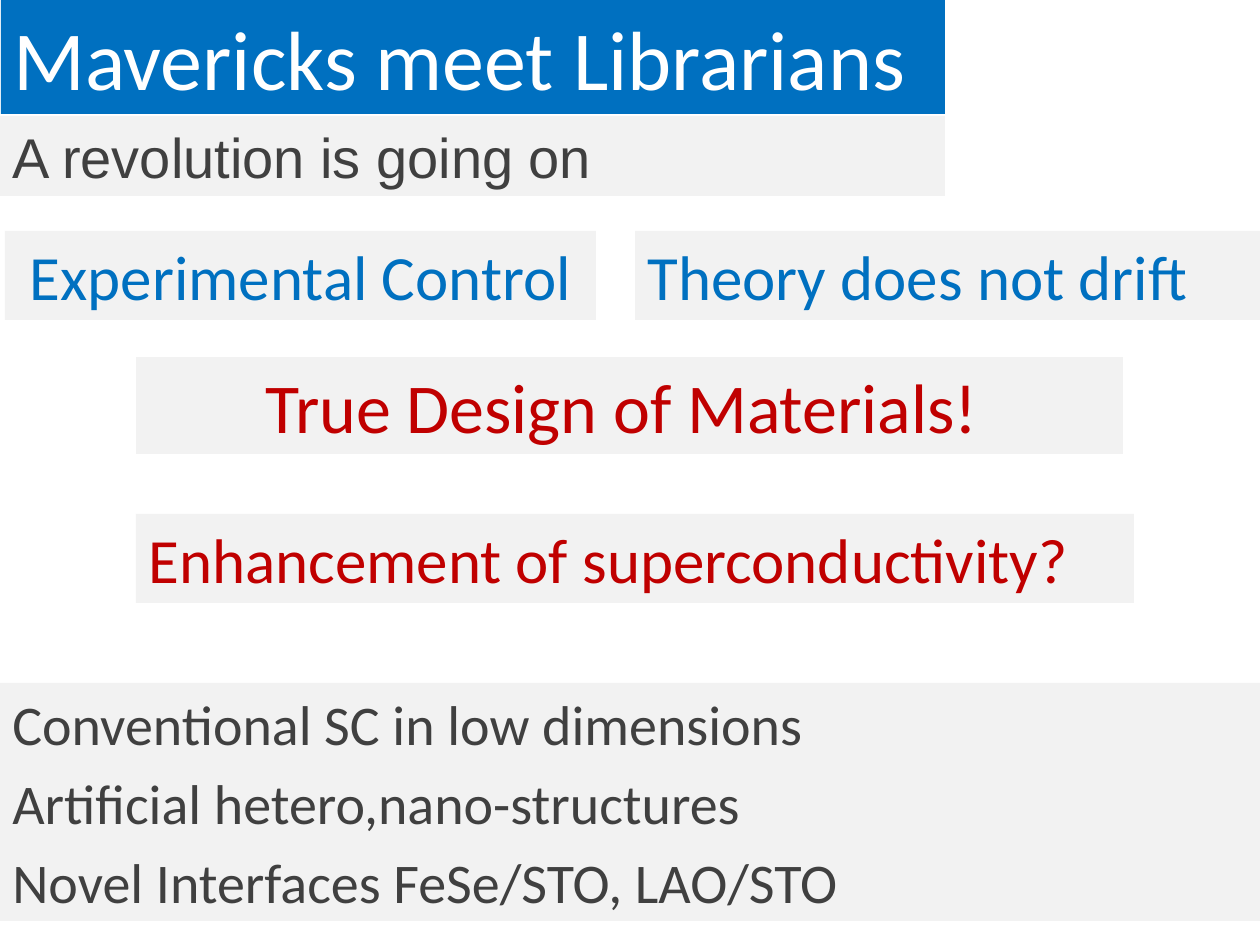
from pptx import Presentation
from pptx import util as u
from pptx.dml import color
from pptx.enum import text

PX = 914400 / 126
BLUE, RED, GREY, PALE, WHITE = "0070C0", "C00000", "404040", "F2F2F2", "FFFFFF"


def px(length):
    return u.Emu(round(length * PX))


def rgb(value):
    return color.RGBColor.from_string(value)


class Deck:
    """Hold the banner style and the current slide."""

    def __init__(self, width, height, font):
        self.presentation = Presentation()
        self.presentation.slide_width = px(width)
        self.presentation.slide_height = px(height)
        self.slide = self.presentation.slides.add_slide(self.presentation.slide_layouts[6])
        self.font = font

    def banner(self, wording, box, size, ink, fill=PALE, font=None, centred=False):
        banner = self.slide.shapes.add_textbox(*map(px, box))
        banner.fill.solid()
        banner.fill.fore_color.rgb = rgb(fill)
        frame = banner.text_frame
        frame.word_wrap = True
        frame.auto_size = text.MSO_AUTO_SIZE.SHAPE_TO_FIT_TEXT
        frame.text = wording
        line = frame.paragraphs[0]
        line.alignment = text.PP_ALIGN.CENTER if centred else text.PP_ALIGN.LEFT
        style = line.runs[0].font
        style.size = u.Pt(size)
        style.name = font or self.font
        style.color.rgb = rgb(ink)


def main():
    deck = Deck(1260, 945, "Calibri")
    deck.banner("Enhancement of superconductivity?", (136, 514, 998, 89), 36, RED)
    deck.banner("Mavericks meet Librarians", (1, 0, 944, 114), 48, WHITE, fill=BLUE)
    deck.banner("Theory does not drift", (635, 231, 625, 89), 36, BLUE)
    deck.banner("Experimental Control", (5, 231, 591, 89), 36, BLUE, centred=True)
    topics = (
        "Conventional SC in low dimensions",
        "Artificial hetero,nano-structures",
        "Novel Interfaces FeSe/STO, LAO/STO",
    )
    for row, topic in enumerate(topics):
        deck.banner(topic, (0, 683 + 79 * row, 1260, 80), 32, GREY)
    deck.banner("True Design of Materials! ", (136, 357, 987, 97), 40, RED, centred=True)
    deck.banner("A revolution is going on", (0, 116, 945, 80), 32, GREY, font="Arial")
    deck.presentation.save("out.pptx")


if __name__ == "__main__":
    main()
